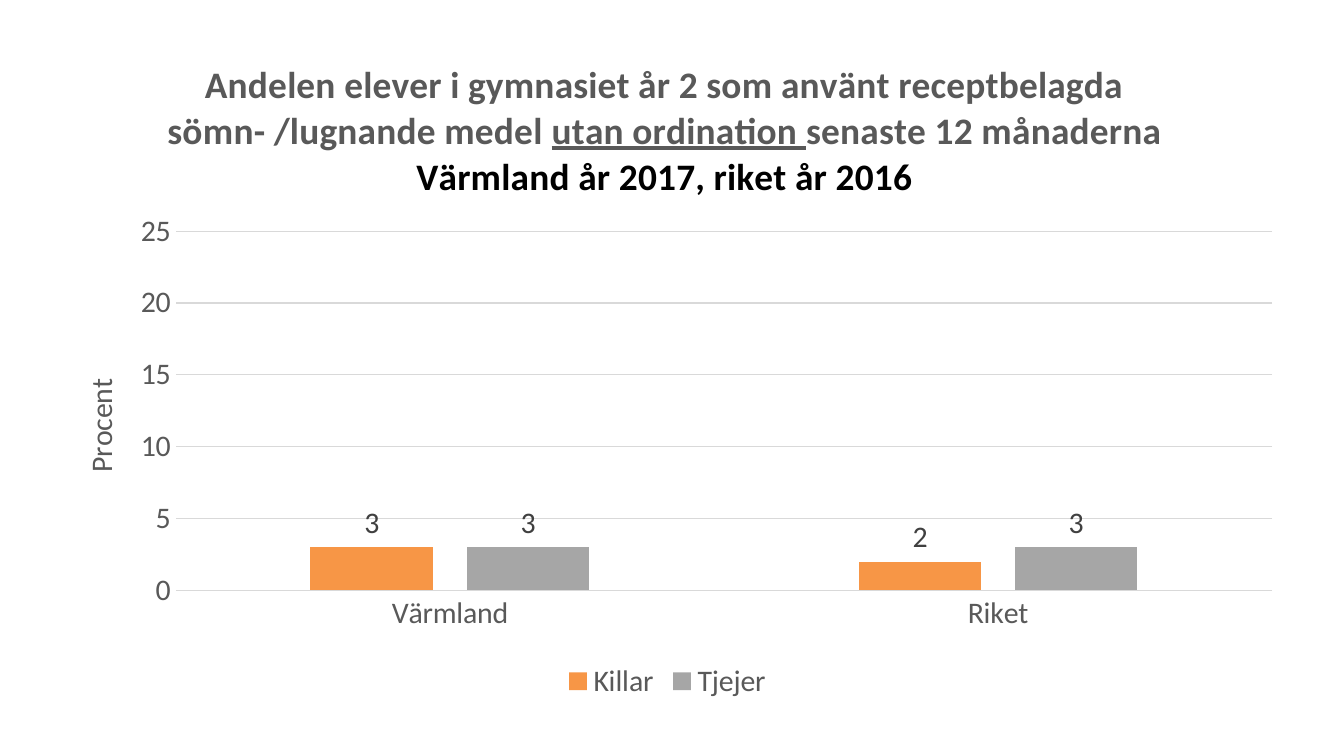
from lxml.etree import SubElement
from pptx import Presentation
from pptx.chart.data import CategoryChartData
from pptx.dml.color import RGBColor
from pptx.enum.chart import XL_CHART_TYPE as ChartType
from pptx.enum.chart import XL_LABEL_POSITION as LabelPos
from pptx.enum.chart import XL_LEGEND_POSITION as LegendPos
from pptx.enum.chart import XL_TICK_MARK as TickMark
from pptx.oxml.ns import qn
from pptx.util import Pt

COLORS = {
    "title": "595959",
    "subtitle": "000000",
    "text": "595959",
    "label": "404040",
    "grid": "D9D9D9",
    "Killar": "F79646",
    "Tjejer": "A6A6A6",
}
FONT = "Calibri"
CATEGORIES = ["Värmland", "Riket"]
SERIES = {"Killar": (3, 2), "Tjejer": (3, 3)}
TITLE = [
    [
        ("Andelen elever i gymnasiet år 2 som använt receptbelagda sömn- /lugnande medel ", "title", False),
        ("utan ordination ", "title", True),
        ("senaste 12 månaderna", "title", False),
    ],
    [("Värmland år 2017, riket år 2016", "subtitle", False)],
]


def rgb(name):
    return RGBColor.from_string(COLORS[name])


def style_font(font, color, size=16, bold=False):
    font.name = FONT
    font.size = Pt(size)
    font.bold = bold
    font.color.rgb = rgb(color)


def style_line(line, color):
    line.color.rgb = rgb(color)
    line.width = Pt(0.75)


def place(element, index, **fractions):
    layout = element.find(qn("c:layout"))
    if layout is not None:
        element.remove(layout)
    layout = SubElement(element, qn("c:layout"))
    manual = SubElement(layout, qn("c:manualLayout"))
    if "w" in fractions:
        SubElement(manual, qn("c:layoutTarget")).set("val", "inner")
    for mode in ("xMode", "yMode"):
        SubElement(manual, qn(f"c:{mode}")).set("val", "edge")
    for key, value in fractions.items():
        SubElement(manual, qn(f"c:{key}")).set("val", str(value))
    element.insert(index, layout)


def add_title(chart):
    title = chart.chart_title
    tf = title.text_frame
    for i, runs in enumerate(TITLE):
        p = tf.add_paragraph() if i else tf.paragraphs[0]
        style_font(p.font, runs[0][1], 20, True)
        for text, color, underline in runs:
            r = p.add_run()
            r.text = text
            style_font(r.font, color, 20, True)
            r.font.underline = underline
    title.include_in_layout = False
    place(title.element, 1, x=0.1, y=0.04)


def format_axes(chart):
    for axis in (chart.category_axis, chart.value_axis):
        axis.major_tick_mark = axis.minor_tick_mark = TickMark.NONE
        style_font(axis.tick_labels.font, "text")
    style_line(chart.category_axis.format.line, "grid")

    axis = chart.value_axis
    axis.minimum_scale, axis.maximum_scale, axis.major_unit = 0, 25, 5
    axis.format.line.fill.background()
    style_line(axis.major_gridlines.format.line, "grid")
    r = axis.axis_title.text_frame.paragraphs[0].add_run()
    r.text = "Procent"
    style_font(r.font, "text")
    place(axis.axis_title.element, 1, x=0.03, y=0.51)


def format_series(plot):
    plot.gap_width = 219
    plot.overlap = -27
    plot.vary_by_categories = False
    for series in plot.series:
        series.format.fill.solid()
        series.format.fill.fore_color.rgb = rgb(series.name)
        labels = series.data_labels
        labels.show_value = True
        labels.position = LabelPos.OUTSIDE_END
        style_font(labels.font, "label")


def add_legend(chart):
    chart.has_legend = True
    chart.legend.position = LegendPos.BOTTOM
    chart.legend.include_in_layout = False
    style_font(chart.legend.font, "text")


def add_column_chart(s):
    data = CategoryChartData()
    data.categories = CATEGORIES
    for name, values in SERIES.items():
        data.add_series(name, values)
    chart = s.shapes.add_chart(
        ChartType.COLUMN_CLUSTERED, Pt(20), Pt(15), Pt(675), Pt(363), data
    ).chart
    style_font(chart.font, "subtitle")
    add_title(chart)
    format_axes(chart)
    format_series(chart.plots[0])
    add_legend(chart)
    plot_area = chart.element.find(f".//{qn('c:plotArea')}")
    place(plot_area, 0, x=0.11, y=0.3, w=0.87, h=0.53)


def main():
    prs = Presentation()
    prs.slide_width, prs.slide_height = Pt(720), Pt(405)
    s = prs.slides.add_slide(prs.slide_layouts[6])
    add_column_chart(s)
    prs.save("out.pptx")


if __name__ == "__main__":
    main()
